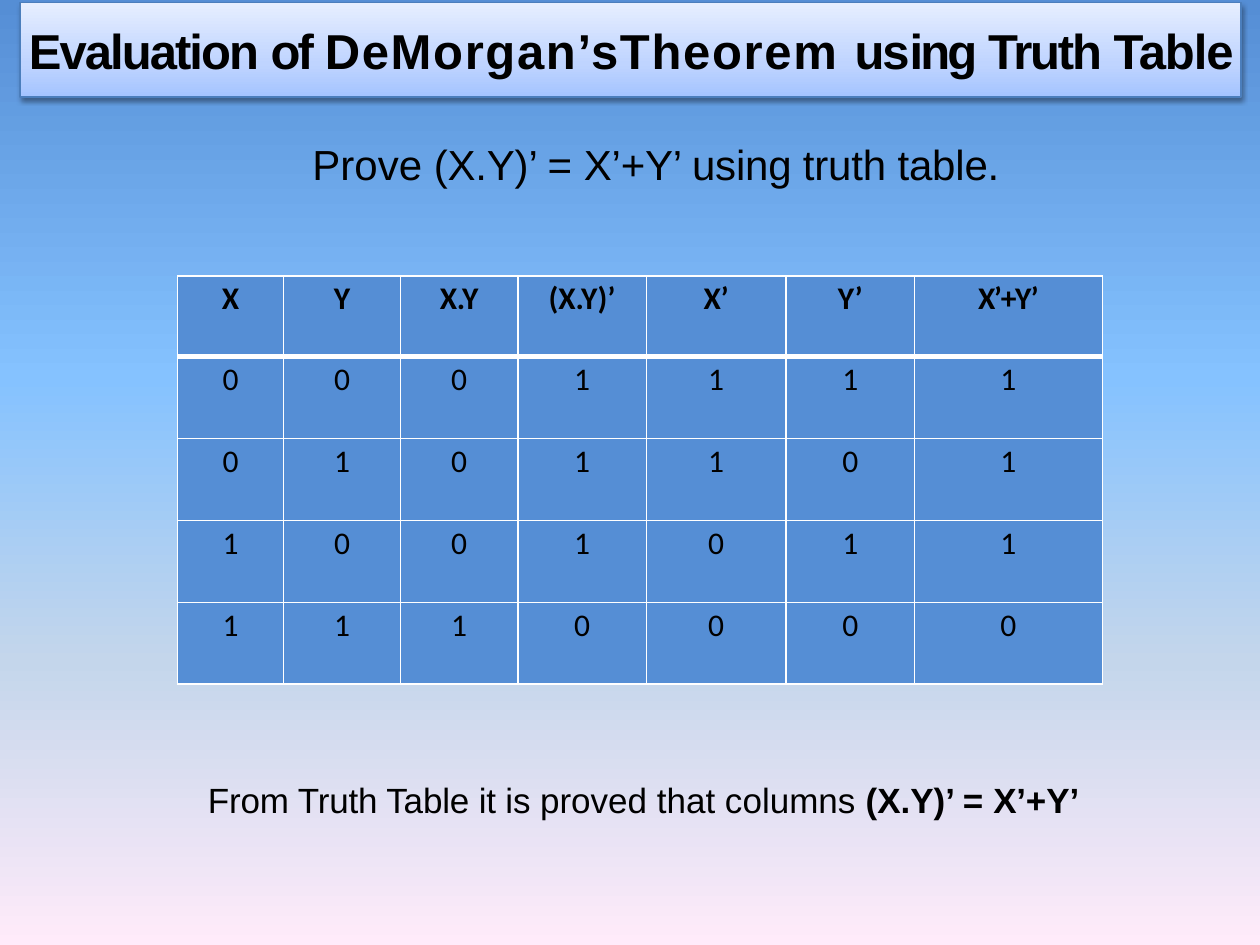
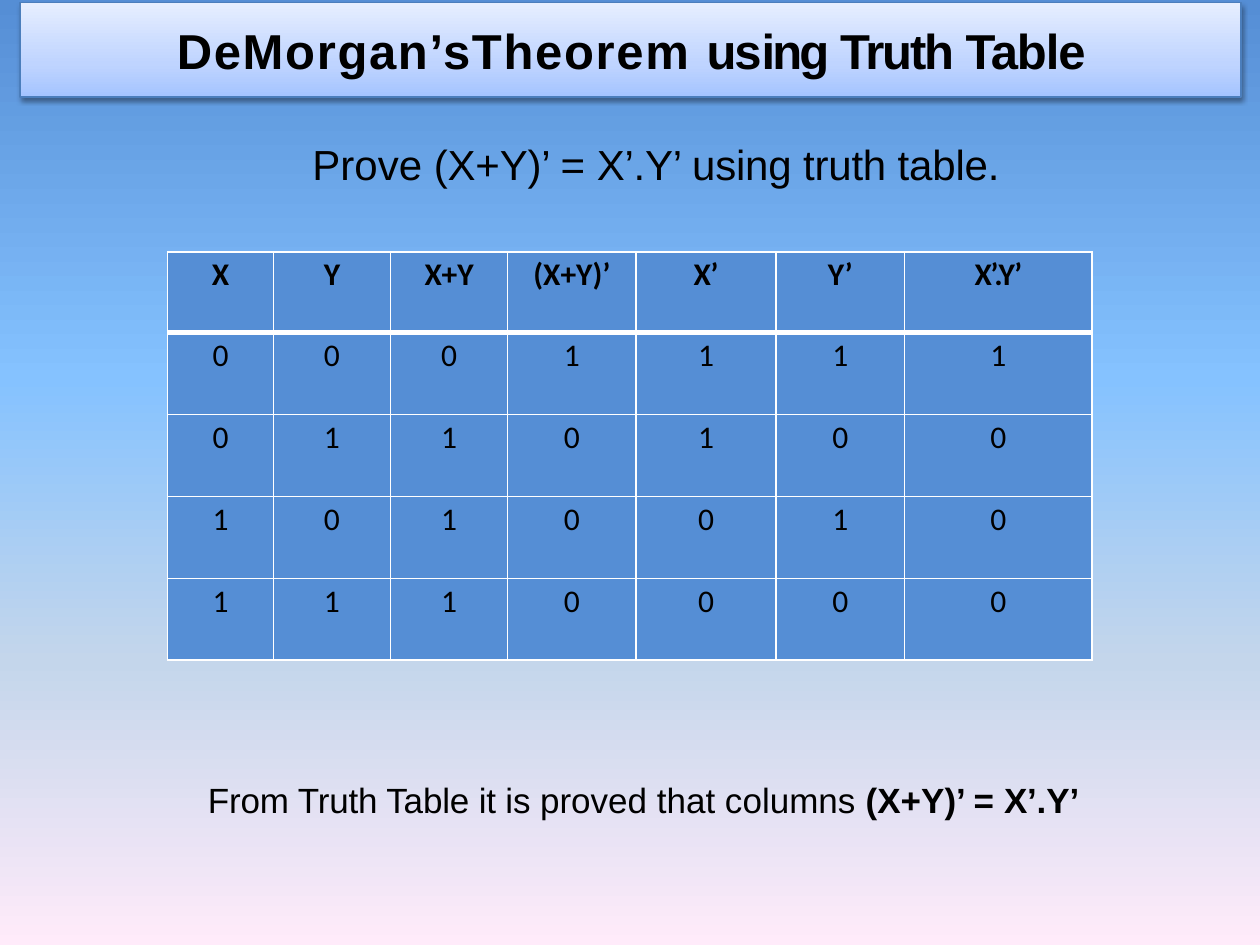
from itertools import product

from lxml import etree
from pptx import Presentation
from pptx.dml.color import RGBColor
from pptx.enum.shapes import MSO_SHAPE
from pptx.enum.text import MSO_ANCHOR, PP_ALIGN
from pptx.oxml import parse_xml
from pptx.oxml.ns import nsdecls, qn
from pptx.util import Inches, Pt

RECT = MSO_SHAPE.RECTANGLE
TOP, MIDDLE = MSO_ANCHOR.TOP, MSO_ANCHOR.MIDDLE
LEFT, CENTER = PP_ALIGN.LEFT, PP_ALIGN.CENTER

BLACK = RGBColor(0x00, 0x00, 0x00)
WHITE = RGBColor(0xFF, 0xFF, 0xFF)
BLUE = RGBColor(0x55, 0x8E, 0xD5)
EDGE = RGBColor(0x4B, 0x7E, 0xBC)
SKY = [(0, BLUE), (40, RGBColor(0x85, 0xC2, 0xFF)),
       (70, RGBColor(0xC4, 0xD6, 0xEB)), (100, RGBColor(0xFF, 0xEB, 0xFA))]
BAND = [(0, RGBColor(0xA4, 0xC4, 0xFF)), (35, RGBColor(0xBF, 0xD4, 0xFF)),
        (100, RGBColor(0xE6, 0xEE, 0xFF))]

COLS = [0.84, 0.93, 0.93, 1.02, 1.11, 1.02, 1.49]
ROWS = [0.64] + [0.65] * 4
HEAD_SPC = [0, 0, -0.1, 0, -0.1, 0.1, -0.7]
TITLE_END = [("DeMorgan’sTheorem ", 1), ("us", -1.2), ("ing ", -1.6),
             ("Truth ", -1.2), ("Table", -0.6)]

# Each proof: start of title, operator, its dual, rule, table corner
PROOFS = [
    ([("Evaluation ", -1.1), ("of ", -1.6)], ".", "+", min, (1.41, 2.19)),
    ([], "+", ".", max, (1.33, 2)),
]


def write(frame, runs, size=18, font="Arial", bold=False, align=LEFT,
          before=1, indent=0.01, inset=0.01, anchor=TOP, wrap=True):
    """Fill a frame with one paragraph of (text, spacing[, bold]) runs."""
    frame.margin_left = frame.margin_right = frame.margin_bottom = 0
    frame.margin_top = Inches(inset)
    frame.vertical_anchor = anchor
    frame.word_wrap = wrap
    para = frame.paragraphs[0]
    para.alignment = align
    para.space_before = Pt(before)
    props = para._p.get_or_add_pPr()
    props.set("marL", str(Inches(indent)))
    props.set("indent", "0")
    for text, gap, *heavy in runs:
        run = para.add_run()
        run.text = text
        run.font.size = Pt(size)
        run.font.name = font
        run.font.bold = heavy[0] if heavy else bold
        run.font.color.rgb = BLACK
        run._r.get_or_add_rPr().set("spc", str(round(gap * 100)))


def grade(props, stops, angle):
    """Swap the solid fill in props for a linear gradient."""
    marks = "".join(f'<a:gs pos="{pos * 1000}"><a:srgbClr val="{color}"/></a:gs>'
                    for pos, color in stops)
    fill = parse_xml(f'<a:gradFill {nsdecls("a")} rotWithShape="1"><a:gsLst>{marks}'
                     f'</a:gsLst><a:lin ang="{angle * 60000}" scaled="0"/></a:gradFill>')
    props.replace(props.find(qn("a:solidFill")), fill)


deck = Presentation()
deck.slide_width, deck.slide_height = Inches(10), Inches(7.5)

for start, sign, dual, rule, (left, top) in PROOFS:
    slide = deck.slides.add_slide(deck.slide_layouts[6])
    whole, split = f"(X{sign}Y)’", f"X’{dual}Y’"

    # Background
    slide.background.fill.solid()
    grade(slide.element.find(".//" + qn("p:bgPr")), SKY, 90)

    # Title band
    band = slide.shapes.add_shape(RECT, Inches(0.16), Inches(0.02),
                                  Inches(9.69), Inches(0.75))
    band.fill.solid()
    band.line.color.rgb = EDGE
    band.line.width = Pt(0.75)
    band.shadow.inherit = False
    props = band.element.spPr
    grade(props, BAND, 270)
    props.find(qn("a:effectLst")).append(parse_xml(
        f'<a:outerShdw {nsdecls("a")} blurRad="{Pt(3.1)}" dist="{Pt(1.6)}" '
        f'dir="5400000" rotWithShape="0"><a:srgbClr val="{BLACK}">'
        '<a:alpha val="38000"/></a:srgbClr></a:outerShdw>'))
    write(band.text_frame, start + TITLE_END, size=28, bold=True, align=CENTER,
          anchor=MIDDLE, wrap=False)

    # Task
    task = slide.shapes.add_textbox(Inches(0.47), Inches(1.09),
                                    Inches(7.73), Inches(0.42))
    write(task.text_frame,
          [("Prove ", 0), (whole + " ", -0.1), ("= ", 0),
           (split + " using truth table.", -0.1)], size=24, indent=2.01)

    # Result
    proof = slide.shapes.add_textbox(Inches(1.64), Inches(6.17),
                                     Inches(8.19), Inches(0.35))
    write(proof.text_frame,
          [("From Truth Table it is ", -0.1), ("proved that columns ", 0),
           (whole + " = ", 0, True), (split, -0.1, True)], size=20)

    # Truth table
    data = [["X", "Y", f"X{sign}Y", whole, "X’", "Y’", split]]
    for x, y in product((0, 1), repeat=2):
        both = rule(x, y)
        data.append([x, y, both, 1 - both, 1 - x, 1 - y, 1 - both])
    table = slide.shapes.add_table(len(ROWS), len(COLS), Inches(left), Inches(top),
                                   Inches(sum(COLS)), Inches(sum(ROWS))).table
    table.first_row = table.horz_banding = False
    for col, width in zip(table.columns, COLS):
        col.width = Inches(width)
    for r, (values, height) in enumerate(zip(data, ROWS)):
        table.rows[r].height = Inches(height)
        for c, value in enumerate(values):
            cell = table.cell(r, c)
            gap = HEAD_SPC[c] if r == 0 else 0
            write(cell.text_frame, [(str(value), gap)], font="Calibri",
                  bold=r == 0, align=CENTER, before=2.5, indent=0)
            cell.margin_left = cell.margin_right = cell.margin_bottom = 0
            cell.margin_top = Inches(0.03)
            props = cell._tc.get_or_add_tcPr()
            for side in "LRTB":
                thick = (r, side) in ((0, "B"), (1, "T"))
                line = etree.SubElement(props, qn("a:ln" + side),
                                        w=str(Pt(3 if thick else 1)))
                paint = etree.SubElement(line, qn("a:solidFill"))
                etree.SubElement(paint, qn("a:srgbClr"), val=str(WHITE))
            cell.fill.solid()
            cell.fill.fore_color.rgb = BLUE

deck.save("out.pptx")
